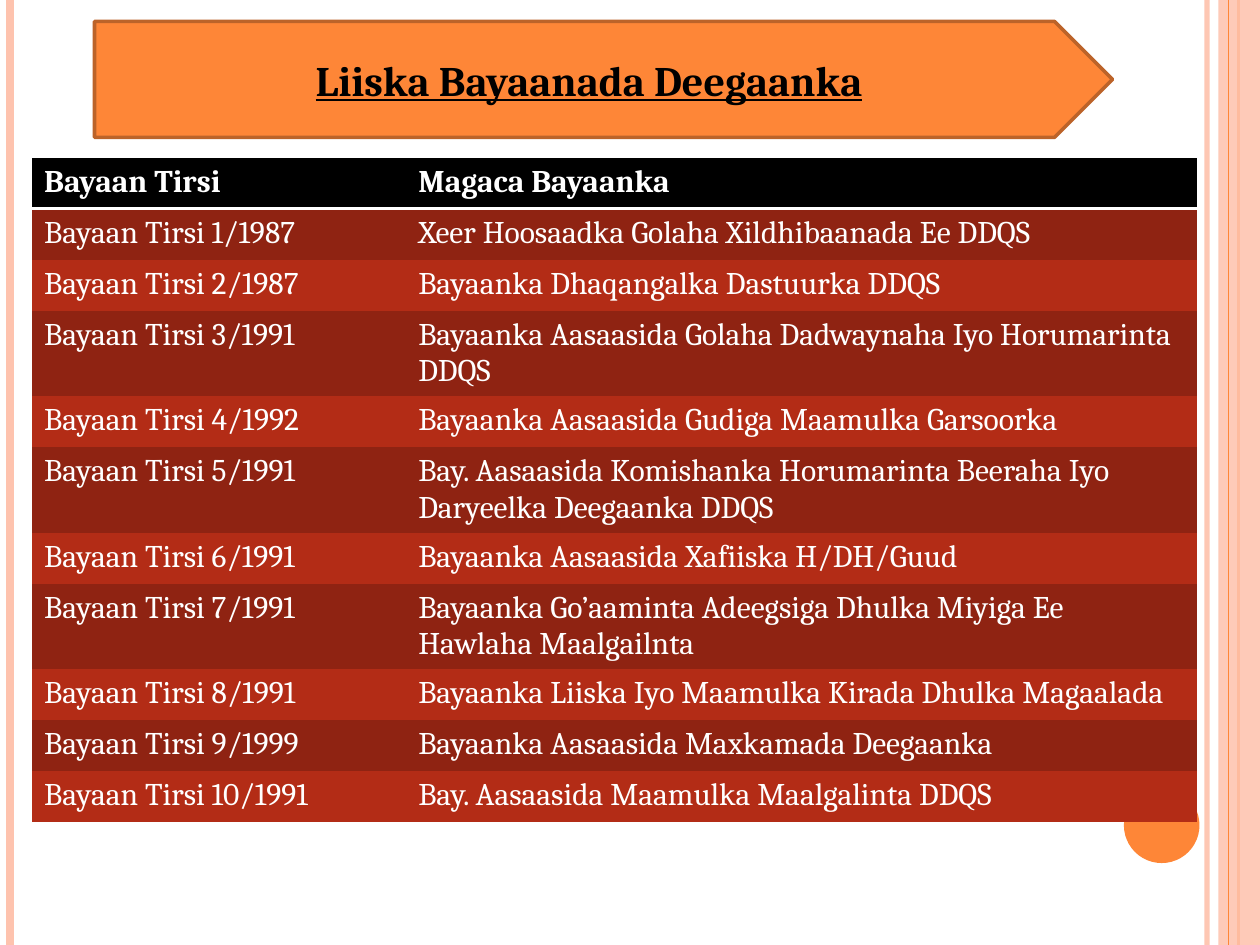
from lxml import etree
from pptx import Presentation, util as u
from pptx.dml.color import RGBColor
from pptx.enum import shapes as kind, text as txt
from pptx.oxml import ns

TITLE = "Liiska Bayaanada Deegaanka"
HEAD = ("Bayaan Tirsi", "Magaca Bayaanka")
LAWS = [
    ("1/1987", "Xeer Hoosaadka Golaha Xildhibaanada Ee DDQS"),
    ("2/1987", "Bayaanka Dhaqangalka Dastuurka DDQS"),
    ("3/1991", "Bayaanka Aasaasida Golaha Dadwaynaha Iyo Horumarinta DDQS"),
    ("4/1992", "Bayaanka Aasaasida Gudiga Maamulka Garsoorka"),
    ("5/1991", "Bay. Aasaasida Komishanka Horumarinta Beeraha Iyo "
               "Daryeelka Deegaanka DDQS"),
    ("6/1991", "Bayaanka Aasaasida Xafiiska H/DH/Guud"),
    ("7/1991", "Bayaanka Go’aaminta Adeegsiga Dhulka Miyiga Ee "
               "Hawlaha Maalgailnta"),
    ("8/1991", "Bayaanka Liiska Iyo Maamulka Kirada Dhulka Magaalada"),
    ("9/1999", "Bayaanka Aasaasida Maxkamada Deegaanka"),
    ("10/1991", "Bay. Aasaasida Maamulka Maalgalinta DDQS"),
]
ROWS = [HEAD] + [(f"{HEAD[0]} {num}", name) for num, name in LAWS]
HUES = {"peach": "FEC3AE", "orange": "FE8637", "rust": "BC6329",
        "dark": "8F2312", "red": "B32C16", "black": "000000",
        "white": "FFFFFF"}
# Rules down the slide: left, width in points, colour, opacity in percent
RULES = [(9.58, 3, "peach", 93), (0.08, 4.5, "peach", 100),
         (9.83, 1.5, "orange", 100), (9.75, 0.75, "orange", 100)]
WIDE, HIGH = 10, 7.5
BAND = 0.33
COLS = (2.97, 6.28)

deck = Presentation()
deck.slide_width, deck.slide_height = u.Inches(WIDE), u.Inches(HIGH)
slide = deck.slides.add_slide(deck.slide_layouts[5])
parts = slide.shapes


def hue(name):
    return RGBColor.from_string(HUES[name])


def paint(fill, name, pct=100):
    fill.solid()
    fill.fore_color.rgb = hue(name)
    if pct < 100:
        tone = fill._xPr.find(".//" + ns.qn("a:srgbClr"))
        etree.SubElement(tone, ns.qn("a:alpha"), val=str(pct * 1000))


def write(frame, words, size=18, color="white", bold=False, under=False,
          align=txt.PP_ALIGN.LEFT):
    para = frame.paragraphs[0]
    para.alignment = align
    run = para.add_run()
    run.text = words
    font = run.font
    font.name, font.size = "Cambria", u.Pt(size)
    font.bold, font.underline = bold, under
    font.color.rgb = hue(color)


def block(form, box, fill, pct=100, edge=None):
    part = parts.add_shape(form, *map(u.Inches, box))
    part.shadow.inherit = False
    paint(part.fill, fill, pct)
    if edge:
        part.line.color.rgb, part.line.width = hue(edge), u.Pt(2)
    else:
        part.line.fill.background()
    return part


def rule(left, width, color, pct):
    line = parts.add_connector(kind.MSO_CONNECTOR.STRAIGHT, u.Inches(left), 0,
                               u.Inches(left), u.Inches(HIGH))
    line.line.width = u.Pt(width)
    paint(line.line.fill, color, pct)
    etree.SubElement(line.element.spPr, ns.qn("a:effectLst"))


# Side rules, band and dot
for item in RULES[:3]:
    rule(*item)
block(kind.MSO_SHAPE.RECTANGLE, (WIDE - BAND, 0, BAND, HIGH), "peach", 87)
rule(*RULES[3])
block(kind.MSO_SHAPE.OVAL, (8.92, 6.25, 0.6, 0.6), "orange")

# Title on its arrow, centred short of the tip
left, top, wide, high = 0.75, 0.17, 8.08, 0.92
block(kind.MSO_SHAPE.PENTAGON, (left, top, wide, high), "orange", edge="rust")
title = parts.title
title.left, title.top = u.Inches(left), u.Inches(top)
title.width, title.height = u.Inches(wide - high / 4), u.Inches(high)
title.text_frame.vertical_anchor = txt.MSO_ANCHOR.MIDDLE
write(title.text_frame, TITLE, size=24, color="black", bold=True, under=True,
      align=txt.PP_ALIGN.CENTER)
parts.element.append(title.element)

# Table of laws; rows grow where the text wraps
row = u.Pt(29.2)
grid = parts.add_table(len(ROWS), len(COLS), u.Inches(0.25), u.Inches(1.25),
                       u.Inches(sum(COLS)), row * len(ROWS)).table
for col, size in zip(grid.columns, COLS):
    col.width = u.Inches(size)
for r, words in enumerate(ROWS):
    grid.rows[r].height = row
    for c, word in enumerate(words):
        cell = grid.cell(r, c)
        write(cell.text_frame, word, bold=r == 0)
        if r == 0:
            props = cell._tc.get_or_add_tcPr()
            edge = etree.SubElement(props, ns.qn("a:lnB"), w=str(u.Pt(2)))
            tint = etree.SubElement(edge, ns.qn("a:solidFill"))
            etree.SubElement(tint, ns.qn("a:srgbClr"), val=HUES["white"])
        paint(cell.fill, "black" if r == 0 else ("red", "dark")[r % 2])

# Plain cells: no style lines between the rows
style = grid._tbl.tblPr.find(ns.qn("a:tableStyleId"))
style.text = "{2D5ABB26-0587-4C30-8999-92F81FD0307C}"

deck.save("out.pptx")
